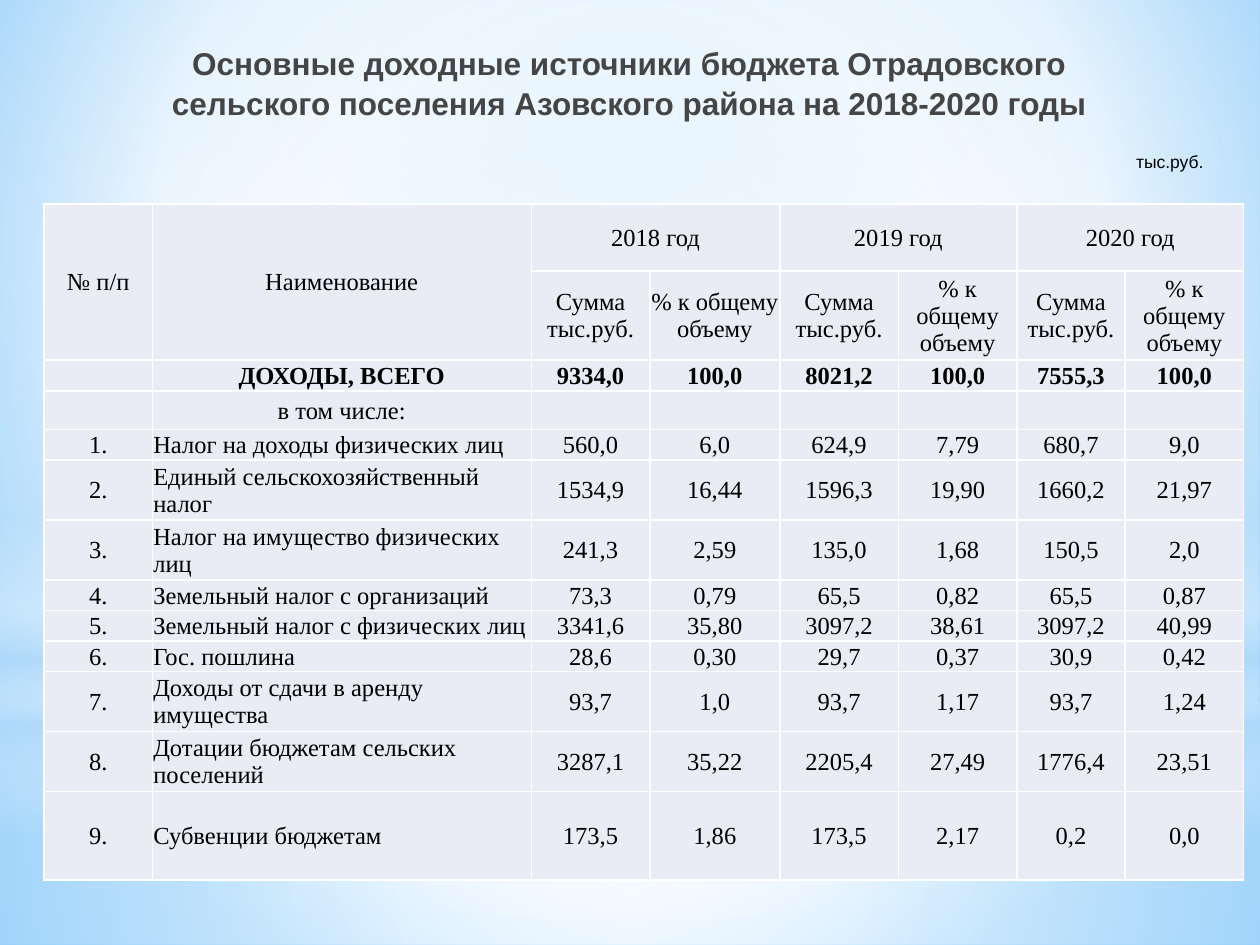
from lxml import etree
from pptx import Presentation
from pptx.dml.color import RGBColor
from pptx.enum import shapes, text
from pptx.oxml import ns
from pptx.util import Cm, Pt

hues = {"white": "FFFFFF", "sky": "B4DCFA", "pale": "9ED5FF", "blue": "5BB9FF",
        "cell": "E9EBF5", "title": "454545", "black": "000000"}


def blend(host, stops, rect=None):
    grad = host.find(".//" + ns.qn("a:gradFill"))
    grad.clear()
    group = etree.SubElement(grad, ns.qn("a:gsLst"))
    for place, hue, alpha in stops:
        stop = etree.SubElement(group, ns.qn("a:gs"), pos=str(place * 1000))
        tint = etree.SubElement(stop, ns.qn("a:srgbClr"), val=hues[hue])
        if alpha < 100:
            etree.SubElement(tint, ns.qn("a:alpha"), val=str(alpha * 1000))
    if rect:
        way = etree.SubElement(grad, ns.qn("a:path"))
        way.set("path", "circle")
        sides = {side: str(val * 1000) for side, val in zip("ltrb", rect)}
        etree.SubElement(way, ns.qn("a:fillToRect"), **sides)
    else:
        etree.SubElement(grad, ns.qn("a:lin"), ang="5400000", scaled="0")


def write(para, words, face, size, hue, align, bold=False):
    para.text = words
    para.alignment = align
    para.font.name = face
    para.font.size = Pt(size)
    para.font.bold = bold
    para.font.color.rgb = RGBColor.from_string(hues[hue])


deck = Presentation()
deck.slide_width, deck.slide_height = Cm(25.4), Cm(19.05)
slide = deck.slides.add_slide(deck.slide_layouts[6])
slide.background.fill.gradient()
blend(slide._element, [(0, "pale", 100), (60, "white", 100), (100, "blue", 100)],
      (20, 10, 20, 60))

mid = (50, 50, 50, 50)
box, oval = shapes.MSO_SHAPE.RECTANGLE, shapes.MSO_SHAPE.OVAL
glows = [
    (box, 14.17, 4.88, mid, [(0, "white", 91), (37, "white", 76), (100, "sky", 79)]),
    (box, 0, 14.17, mid, [(0, "white", 89), (48, "white", 62), (100, "sky", 79)]),
    (box, 10.46, 6.35, None, [(0, "white", 0), (29, "white", 30), (45, "sky", 40),
                              (55, "white", 26), (65, "sky", 60), (100, "white", 0)]),
    (oval, 4.45, 14.17, mid, [(0, "white", 100), (56, "white", 0)]),
]
for kind, top, high, rect, stops in glows:
    glow = slide.shapes.add_shape(kind, 0, Cm(top), deck.slide_width, Cm(high))
    glow.shadow.inherit = False
    glow.line.fill.background()
    glow.fill.gradient()
    blend(glow._element, stops, rect)

left, center, right = text.PP_ALIGN.LEFT, text.PP_ALIGN.CENTER, text.PP_ALIGN.RIGHT
title = slide.shapes.add_textbox(Cm(3.07), Cm(0.71), Cm(19.23), Cm(3.18)).text_frame
title.word_wrap = True
write(title.paragraphs[0],
      "Основные доходные источники бюджета Отрадовского сельского поселения "
      "Азовского района на 2018-2020 годы", "Arial", 18, "title", center, True)
title.paragraphs[0].line_spacing = 1.07
unit = slide.shapes.add_textbox(Cm(20.12), Cm(2.92), Cm(4.39), Cm(0.69)).text_frame
unit.word_wrap = True
write(unit.paragraphs[0], "тыс.руб.", "Arial", 10, "black", right)

items = [
    ("Налог на доходы физических лиц", "560,0 6,0 624,9 7,79 680,7 9,0"),
    ("Единый сельскохозяйственный налог", "1534,9 16,44 1596,3 19,90 1660,2 21,97"),
    ("Налог на имущество физических лиц", "241,3 2,59 135,0 1,68 150,5 2,0"),
    ("Земельный налог с организаций", "73,3 0,79 65,5 0,82 65,5 0,87"),
    ("Земельный налог с физических лиц", "3341,6 35,80 3097,2 38,61 3097,2 40,99"),
    ("Гос. пошлина", "28,6 0,30 29,7 0,37 30,9 0,42"),
    ("Доходы от сдачи в аренду имущества", "93,7 1,0 93,7 1,17 93,7 1,24"),
    ("Дотации бюджетам сельских поселений", "3287,1 35,22 2205,4 27,49 1776,4 23,51"),
    ("Субвенции бюджетам", "173,5 1,86 173,5 2,17 0,2 0,0"),
]
rows = [
    ["№ п/п", "Наименование", "2018 год", "", "2019 год", "", "2020 год", ""],
    ["", ""] + ["Сумма тыс.руб.", "% к общему объему"] * 3,
    ["", "ДОХОДЫ, ВСЕГО"] + "9334,0 100,0 8021,2 100,0 7555,3 100,0".split(),
    ["", "в том числе:"] + [""] * 6,
]
rows += [[f"{num}.", name] + vals.split() for num, (name, vals) in enumerate(items, 1)]
wides = [2.18, 7.64, 2.39, 2.62, 2.39, 2.39, 2.18, 2.39]
highs = [1.35, 1.8, 0.62, 0.78, 0.61, 1.21, 1.21, 0.61, 0.61, 0.61, 1.21, 1.21, 1.78]

grid = slide.shapes.add_table(len(rows), len(wides), Cm(0.89), Cm(4.11),
                              Cm(sum(wides)), Cm(sum(highs))).table
grid.first_row = grid.horz_banding = False
for col, wide in zip(grid.columns, wides):
    col.width = Cm(wide)
for row, high in zip(grid.rows, highs):
    row.height = Cm(high)

for y, row in enumerate(rows):
    for x, words in enumerate(row):
        cell = grid.cell(y, x)
        cell.margin_left = cell.margin_right = cell.margin_top = Cm(0.02)
        cell.margin_bottom = 0
        cell.vertical_anchor = text.MSO_ANCHOR.MIDDLE
        para = cell.text_frame.paragraphs[0]
        align = left if x == 1 and y > 3 else center
        write(para, words, "Times New Roman", 14, "black", align, y == 2)
        if not words:
            para._p.get_or_add_endParaRPr().set("sz", "1400")
        props = cell._tc.get_or_add_tcPr()
        for side in ("lnL", "lnR", "lnT", "lnB"):
            edge = etree.SubElement(props, ns.qn("a:" + side), w="12700")
            paint = etree.SubElement(edge, ns.qn("a:solidFill"))
            etree.SubElement(paint, ns.qn("a:srgbClr"), val=hues["white"])
        cell.fill.solid()
        cell.fill.fore_color.rgb = RGBColor.from_string(hues["cell"])

for x in (0, 1):
    grid.cell(0, x).merge(grid.cell(1, x))
for x in (2, 4, 6):
    grid.cell(0, x).merge(grid.cell(0, x + 1))

deck.save("out.pptx")
